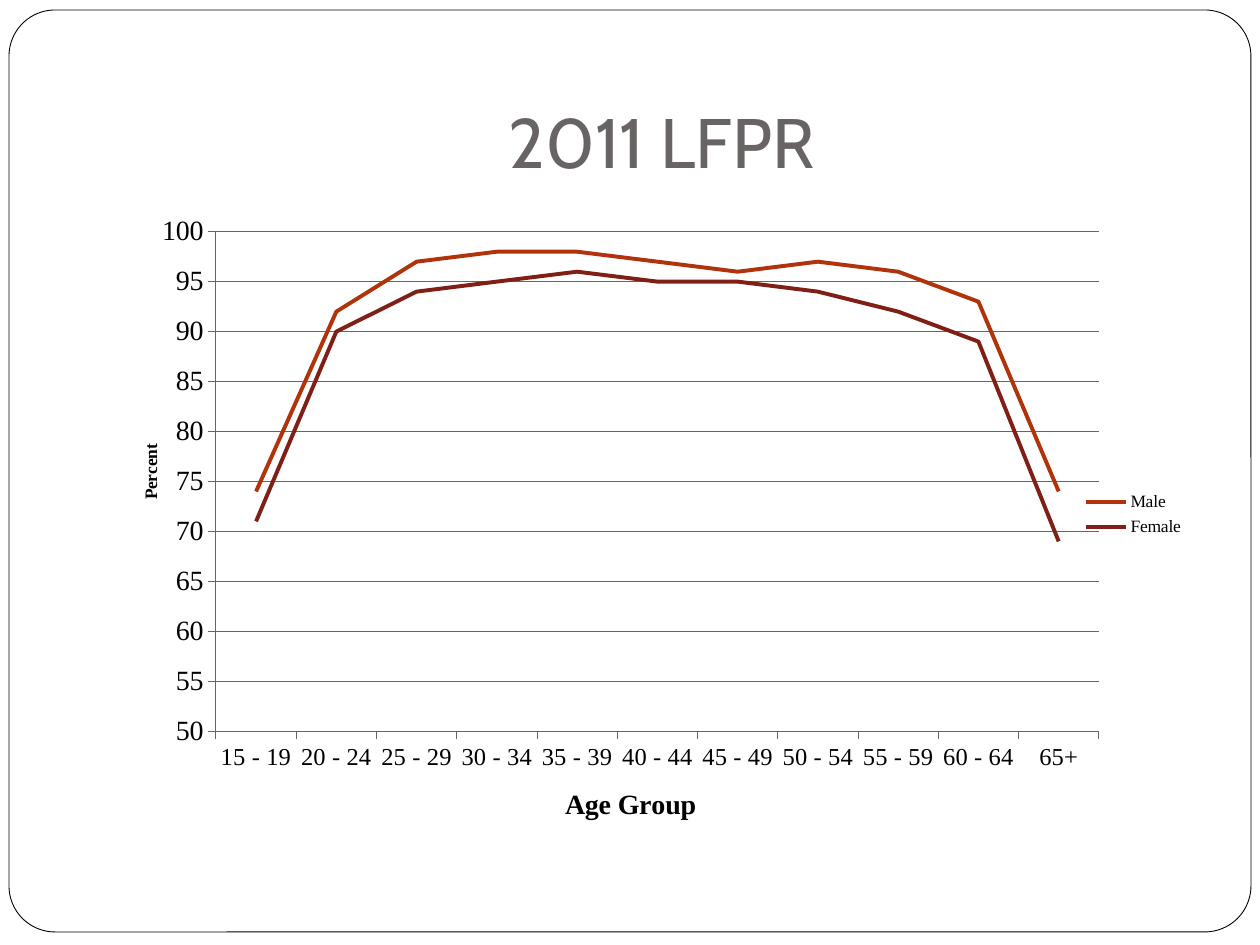
"""Build a slide with a line chart of 2011 labour force participation by age group."""
import pptx
import pptx.chart.data
import pptx.dml.color
import pptx.enum.chart
import pptx.enum.shapes
import pptx.enum.text
import pptx.oxml
import pptx.oxml.ns
import pptx.util

PX = 914400 / 126
CHART_W, CHART_H = 1071, 630


def color(hex_value):
    return pptx.dml.color.RGBColor.from_string(hex_value)


def place(parent, index, box, inner=False):
    for old in parent.xpath("c:layout"):
        parent.remove(old)
    target = '<c:layoutTarget val="inner"/>' if inner else ""
    modes = "".join(f'<c:{k}Mode val="edge"/>' for k in "xy")
    values = "".join(f'<c:{k} val="{v / full:.4f}"/>'
                     for k, v, full in zip("xywh", box, (CHART_W, CHART_H) * 2))
    parent.insert(index, pptx.oxml.parse_xml(
        f'<c:layout {pptx.oxml.ns.nsdecls("c")}><c:manualLayout>'
        f'{target}{modes}{values}</c:manualLayout></c:layout>'))


prs = pptx.Presentation()
prs.slide_width = round(1260 * PX)
prs.slide_height = round(945 * PX)
s = prs.slides.add_slide(prs.slide_layouts[5])

frame = s.shapes.add_shape(
    pptx.enum.shapes.MSO_SHAPE.ROUNDED_RECTANGLE,
    *[round(v * PX) for v in (9, 10, 1242, 922)])
frame.adjustments[0] = 0.05
frame.shadow.inherit = False
frame.fill.solid()
frame.fill.fore_color.rgb = color("FFFFFF")
frame.line.color.rgb = color("000000")
frame.line.width = pptx.util.Pt(0.5)
frame.element.getparent().insert(2, frame.element)

title = s.shapes.title
title.left, title.top, title.width, title.height = [
    round(v * PX) for v in (126, 38, 1071, 157)]
tf = title.text_frame
tf.word_wrap = True
tf.vertical_anchor = pptx.enum.text.MSO_ANCHOR.BOTTOM
tf.margin_bottom = pptx.util.Inches(0.1)
p = tf.paragraphs[0]
p.alignment = pptx.enum.text.PP_ALIGN.CENTER
r = p.add_run()
r.text = "2011 LFPR"
r.font.name = "Cabin"
r.font.size = pptx.util.Pt(40)
r.font.color.rgb = color("696464")

data = pptx.chart.data.CategoryChartData()
data.categories = [f"{age} - {age + 4}" for age in range(15, 65, 5)] + ["65+"]
data.add_series("Male", (74, 92, 97, 98, 98, 97, 96, 97, 96, 93, 74))
data.add_series("Female", (71, 90, 94, 95, 96, 95, 95, 94, 92, 89, 69))
chart = s.shapes.add_chart(
    pptx.enum.chart.XL_CHART_TYPE.LINE,
    *[round(v * PX) for v in (126, 199, CHART_W, CHART_H)], data).chart
chart.has_title = False
chart.font.name = "Times New Roman"
chart.font.size = pptx.util.Pt(10)
chart.font.color.rgb = color("000000")

plot = chart.plots[0]
plot.vary_by_categories = False
for series, line_color in zip(plot.series, ("B0330C", "801F15")):
    series.smooth = False
    series.format.line.color.rgb = color(line_color)
    series.format.line.width = pptx.util.Pt(2.25)
    series.marker.style = pptx.enum.chart.XL_MARKER_STYLE.NONE

values = chart.value_axis
values.minimum_scale, values.maximum_scale, values.major_unit = 50, 100, 5
values.has_major_gridlines = True
values.tick_labels.number_format = "0"
values.tick_labels.number_format_is_linked = False
lines = [(values.major_gridlines.format.line, 0.75)]
for axis, name, name_size, label_size in (
        (chart.category_axis, "Age Group", 16, 14),
        (values, "Percent", 10, 16)):
    axis.major_tick_mark = pptx.enum.chart.XL_TICK_MARK.OUTSIDE
    axis.minor_tick_mark = pptx.enum.chart.XL_TICK_MARK.NONE
    axis.tick_labels.font.size = pptx.util.Pt(label_size)
    lines.append((axis.format.line, 0.5))
    r = axis.axis_title.text_frame.paragraphs[0].add_run()
    r.text = name
    r.font.name = "Times New Roman"
    r.font.size = pptx.util.Pt(name_size)
    r.font.bold = True
    r.font.color.rgb = color("000000")
for line, width in lines:
    line.color.rgb = color("696464")
    line.width = pptx.util.Pt(width)

chart.has_legend = True
chart.legend.position = pptx.enum.chart.XL_LEGEND_POSITION.RIGHT
chart.legend.include_in_layout = False
chart.legend.font.size = pptx.util.Pt(10)

root = chart.element
place(root.xpath("//c:plotArea")[0], 0, (90, 33, 883, 503), inner=True)
place(root.xpath("//c:catAx/c:title")[0], 1, (434, 586))
place(root.xpath("//c:valAx/c:title")[0], 1, (10, 244))
place(root.xpath("//c:legend")[0], 1, (954, 290, 107, 55))

prs.save("out.pptx")
